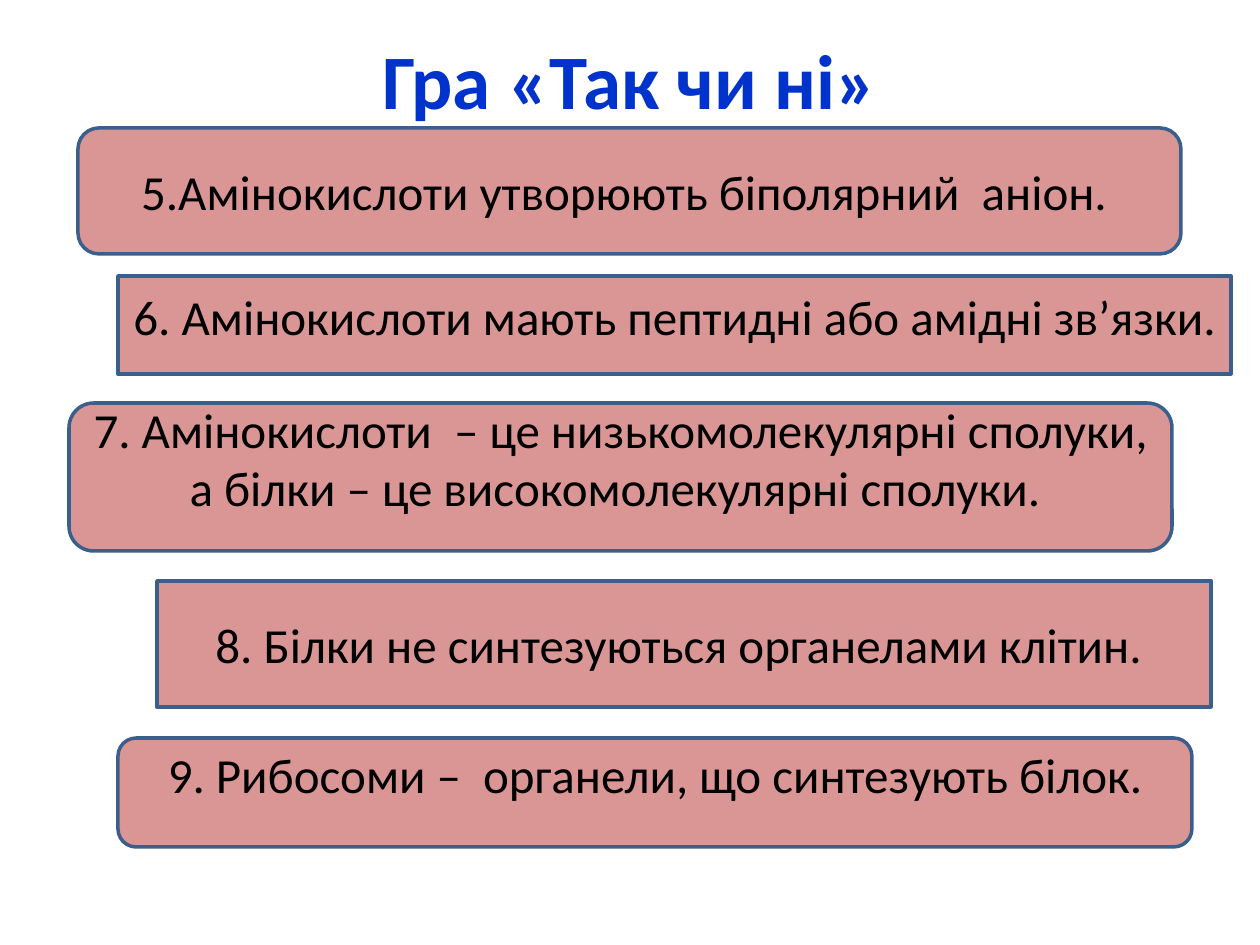
from pptx import Presentation
from pptx.dml.color import RGBColor
from pptx.enum.shapes import MSO_SHAPE as Shape
from pptx.enum.text import MSO_ANCHOR as Anchor, PP_ALIGN as Align
from pptx.util import Emu, Pt

PX = 914400 // 126
FONT = "Calibri"
TITLE = "Гра «Так чи ні»"
TITLE_BOX = (63, 38, 1134, 81)
INSET = 6
ROUND, SQUARE = Shape.ROUNDED_RECTANGLE, Shape.RECTANGLE

STATEMENTS = [
    ("5.Амінокислоти утворюють біполярний  аніон. ", ROUND, (78, 128, 1103, 126), 0),
    ("6. Амінокислоти мають пептидні або амідні зв’язки.", SQUARE, (118, 276, 1113, 98), 18),
    ("7. Амінокислоти  – це низькомолекулярні сполуки, а білки – це високомолекулярні сполуки. ",
     ROUND, (69, 403, 1103, 148), 38),
    ("8. Білки не синтезуються органелами клітин. ", SQUARE, (157, 581, 1054, 126), 0),
    ("9. Рибосоми –  органели, що синтезують білок.", ROUND, (118, 738, 1074, 109), 38),
]


def px(value):
    return Emu(value * PX)


def color(value):
    return RGBColor.from_string(value)


def write(box, text, size, shade, bold=False, lift=0):
    frame = box.text_frame
    frame.word_wrap = True
    frame.vertical_anchor = Anchor.MIDDLE
    frame.margin_top = px(INSET)
    frame.margin_bottom = px(INSET + lift)
    para = frame.paragraphs[0]
    para.text = text
    para.alignment = Align.CENTER
    font = para.font
    font.name, font.size, font.bold = FONT, Pt(size), bold
    font.color.rgb = color(shade)


def add_statement(page, text, kind, place, lift):
    box = page.shapes.add_shape(kind, *map(px, place))
    box.shadow.inherit = False
    box.fill.solid()
    box.fill.fore_color.rgb = color("D99694")
    box.line.color.rgb = color("3A5F8C")
    box.line.width = Pt(2)
    write(box, text, 28, "000000", lift=lift)


def main():
    deck = Presentation()
    deck.slide_width, deck.slide_height = px(1260), px(945)
    page = deck.slides.add_slide(deck.slide_layouts[6])
    title = page.shapes.add_textbox(*map(px, TITLE_BOX))
    write(title, TITLE, 44, "0033CC", bold=True)
    for statement in STATEMENTS:
        add_statement(page, *statement)
    deck.save("out.pptx")


if __name__ == "__main__":
    main()
